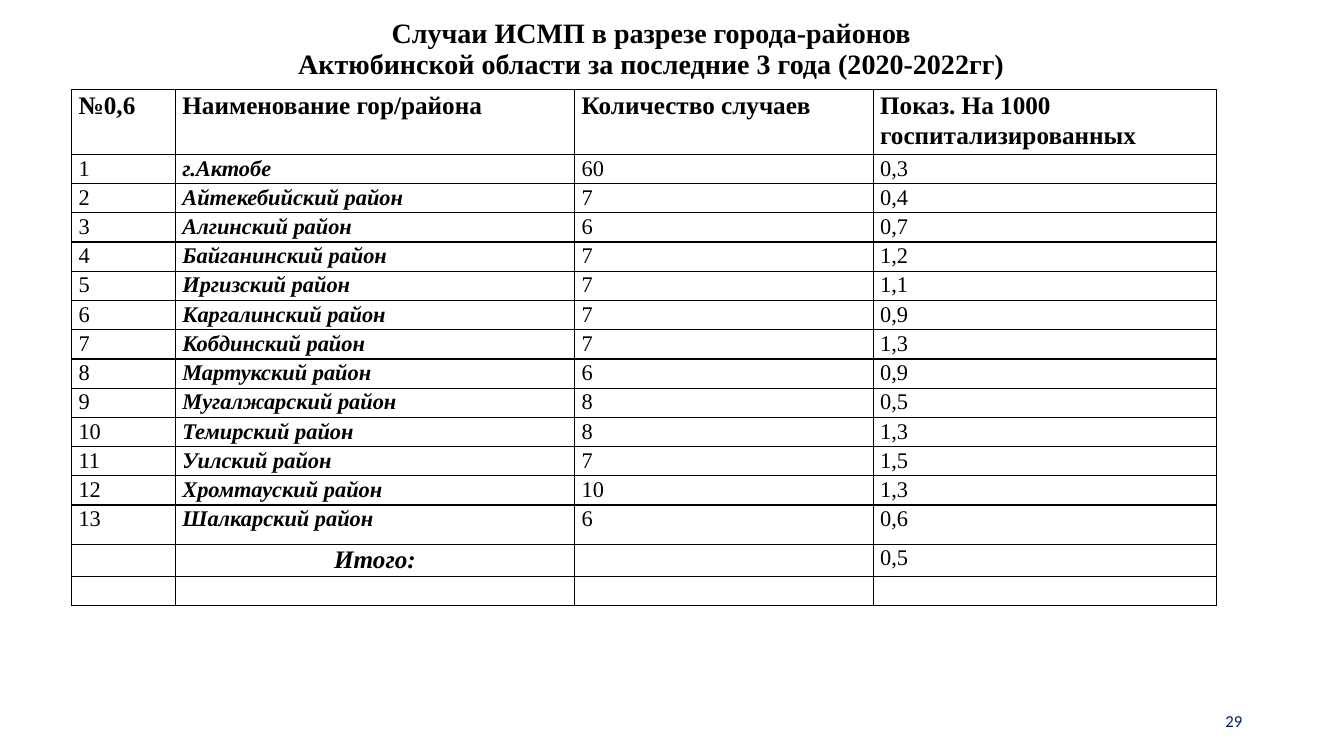
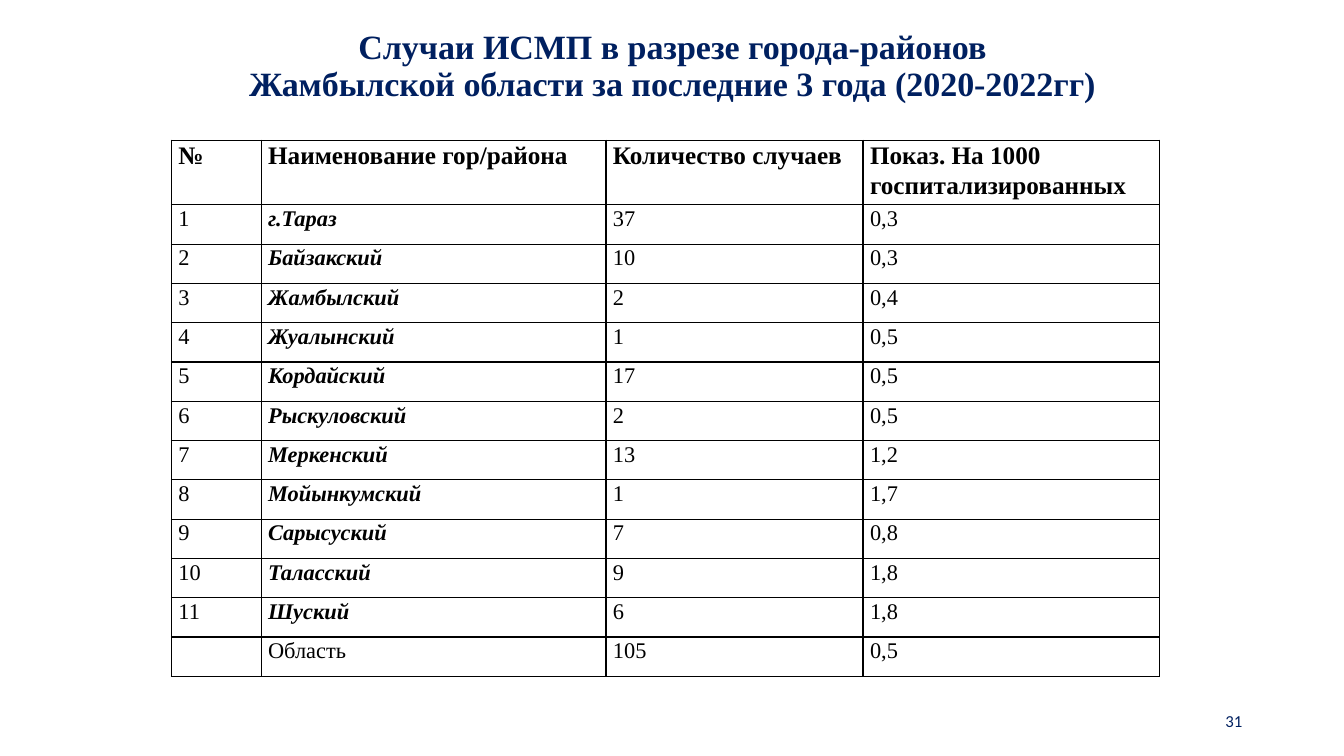
"""Builds two slides with tables of infection cases by district."""
from lxml import etree
from pptx import Presentation
from pptx.dml.color import RGBColor
from pptx.enum.text import MSO_ANCHOR, PP_ALIGN
from pptx.oxml.ns import qn
from pptx.util import Inches, Pt

LEFT, CENTER, RIGHT = PP_ALIGN.LEFT, PP_ALIGN.CENTER, PP_ALIGN.RIGHT
MIDDLE = MSO_ANCHOR.MIDDLE
BLACK = RGBColor(0x00, 0x00, 0x00)
NAVY = RGBColor(0x00, 0x20, 0x60)
SERIF, SANS = "Times New Roman", "Calibri"
HEADINGS = ["Наименование гор/района", "Количество случаев",
            "Показ. На 1000 госпитализированных"]
PAGE_BOX = (9.42, 6.95, 3, 0.4)

AKTOBE = [
    ("г.Актобе", "60", "0,3"),
    ("Айтекебийский район", "7", "0,4"),
    ("Алгинский район", "6", "0,7"),
    ("Байганинский район", "7", "1,2"),
    ("Иргизский район", "7", "1,1"),
    ("Каргалинский район", "7", "0,9"),
    ("Кобдинский район", "7", "1,3"),
    ("Мартукский район", "6", "0,9"),
    ("Мугалжарский район", "8", "0,5"),
    ("Темирский район", "8", "1,3"),
    ("Уилский район", "7", "1,5"),
    ("Хромтауский район", "10", "1,3"),
    ("Шалкарский район", "6", "0,6"),
]
ZHAMBYL = [
    ("г.Тараз", "37", "0,3"),
    ("Байзакский", "10", "0,3"),
    ("Жамбылский", "2", "0,4"),
    ("Жуалынский", "1", "0,5"),
    ("Кордайский", "17", "0,5"),
    ("Рыскуловский", "2", "0,5"),
    ("Меркенский", "13", "1,2"),
    ("Мойынкумский", "1", "1,7"),
    ("Сарысуский", "7", "0,8"),
    ("Таласский", "9", "1,8"),
    ("Шуский", "6", "1,8"),
]


def style_paragraph(p, size, color=BLACK, name=SERIF, bold=False, italic=False,
                    align=LEFT, spacing=1.0):
    """Set the font, alignment and line spacing of a paragraph."""
    p.alignment, p.line_spacing = align, spacing
    font = p.font
    font.size, font.name, font.bold, font.italic = Pt(size), name, bold, italic
    font.color.rgb = color


def add_text(s, box, text, size, **style):
    """Add a vertically centred text box."""
    tf = s.shapes.add_textbox(*map(Inches, box)).text_frame
    tf.word_wrap = True
    tf.vertical_anchor = MIDDLE
    p = tf.paragraphs[0]
    p.text = text
    style_paragraph(p, size, **style)


def style_cell(cell):
    """Give a cell narrow margins, a thin black border and no fill."""
    cell.margin_left = cell.margin_right = Inches(0.07)
    cell.margin_top = cell.margin_bottom = 0
    tcPr = cell._tc.get_or_add_tcPr()
    for side in ("a:lnL", "a:lnR", "a:lnT", "a:lnB"):
        ln = etree.SubElement(tcPr, qn(side), w=str(Pt(1)))
        fill = etree.SubElement(ln, qn("a:solidFill"))
        etree.SubElement(fill, qn("a:srgbClr"), val=str(BLACK))
    cell.fill.background()


def add_case_table(s, left, top, widths, heights, rows):
    """Add a bordered table with a bold heading and italic district names."""
    table = s.shapes.add_table(
        len(rows), len(widths), Inches(left), Inches(top),
        Inches(sum(widths)), Inches(sum(heights))).table
    table.first_row = table.horz_banding = False
    for column, width in zip(table.columns, widths):
        column.width = Inches(width)
    for i, (row, height, values) in enumerate(zip(table.rows, heights, rows)):
        row.height = Inches(height)
        for j, (cell, value) in enumerate(zip(row.cells, values)):
            style_cell(cell)
            heading, total = i == 0, value == "Итого:"
            district = j == 1 and not heading and (values[0] != "" or total)
            p = cell.text_frame.paragraphs[0]
            p.text = value
            style_paragraph(p, 18 if heading or total else 16,
                            bold=heading or district, italic=district,
                            align=CENTER if total else LEFT, spacing=1.07)


def number_rows(first_heading, districts, totals):
    """Join the heading, the numbered districts and the closing rows."""
    numbered = [(str(n), *row) for n, row in enumerate(districts, 1)]
    return [(first_heading, *HEADINGS), *numbered, *totals]


def add_region_slide(prs, region, page, title_box, title_size, title_color, **table):
    """Add a slide with a region title, its table and the page number."""
    s = prs.slides.add_slide(prs.slide_layouts[6])
    title = f"Случаи ИСМП в разрезе города-районов\v{region} области за последние 3 года (2020-2022гг)"
    add_text(s, title_box, title, title_size, color=title_color, bold=True,
             align=CENTER, spacing=0.9)
    add_case_table(s, **table)
    add_text(s, PAGE_BOX, page, 12, color=NAVY, name=SANS, align=RIGHT)


def main():
    """Build and save the presentation."""
    prs = Presentation()
    prs.slide_width, prs.slide_height = Inches(13.33), Inches(7.5)
    add_region_slide(
        prs, "Актюбинской", "29", (0.51, 0.1, 11.9, 0.79), 20, BLACK,
        left=0.71, top=0.89, widths=[1.03, 3.96, 2.96, 3.41],
        heights=[0.64] + [0.29] * 12 + [0.39, 0.31, 0.29],
        rows=number_rows("№0,6", AKTOBE, [("", "Итого:", "", "0,5"), ("",) * 4]))
    add_region_slide(
        prs, "Жамбылской", "31", (1.7, 0.21, 9.94, 0.91), 24.3, NAVY,
        left=1.7, top=1.39, widths=[0.89, 3.42, 2.55, 2.94],
        heights=[0.57] + [0.39] * 12,
        rows=number_rows("№", ZHAMBYL, [("", "Область", "105", "0,5")]))
    prs.save("out.pptx")


if __name__ == "__main__":
    main()
